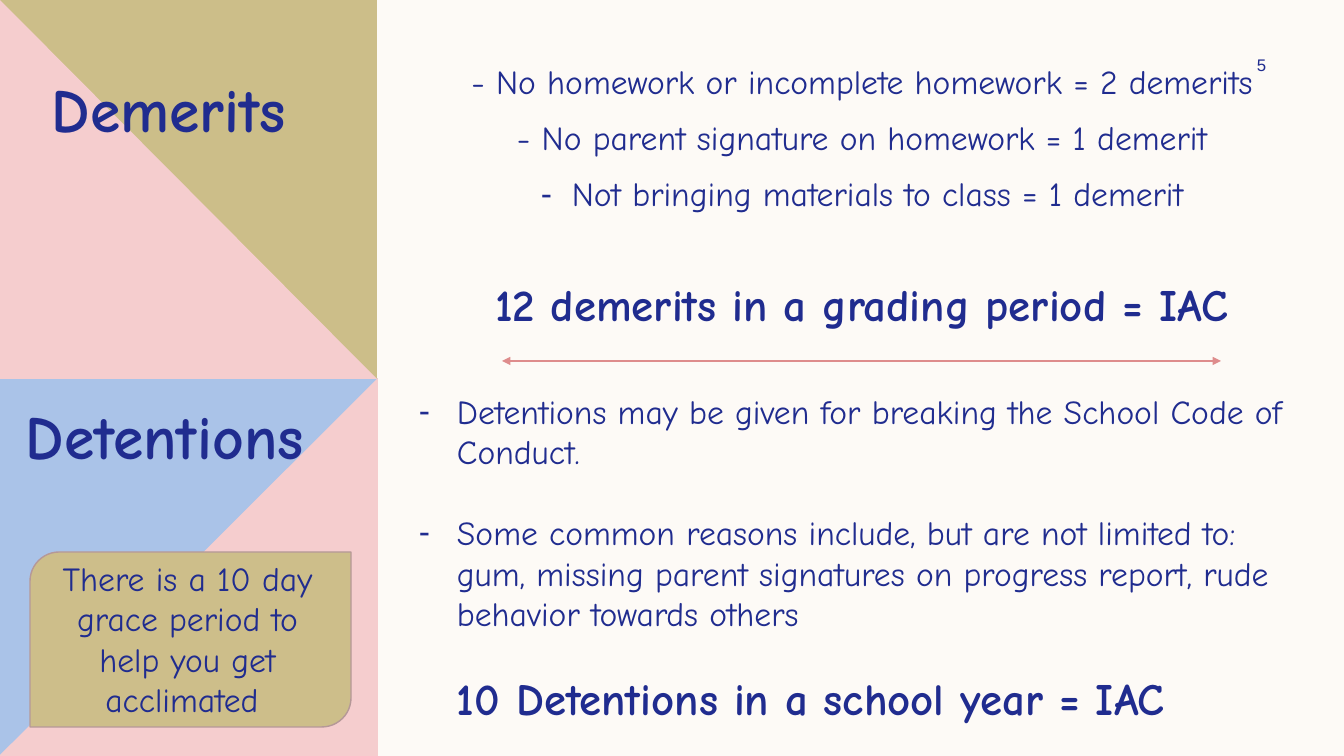
from lxml.etree import SubElement
from pptx import Presentation
from pptx.dml.color import RGBColor
from pptx.enum.shapes import MSO_CONNECTOR as Connector, MSO_SHAPE as Preset
from pptx.enum.text import MSO_ANCHOR as Anchor, PP_ALIGN as Align
from pptx.oxml.ns import qn
from pptx.util import Emu, Pt

# Content: paragraphs as (text, format)
DEMERITS = [
    ("- No homework or incomplete homework = 2 demerits", {}),
    ("- No parent signature on homework = 1 demerit", {}),
    ("Not bringing materials to class = 1 demerit", {"hang": 31}),
    ("12 demerits in a grading period = IAC", {"size": "total", "bold": True, "before": 32}),
]
DETENTIONS = [
    ("Detentions may be given for breaking the School Code of Conduct.", {"hang": 38}),
    ("Some common reasons include, but are not limited to: gum, missing parent "
     "signatures on progress report, rude behavior towards others",
     {"hang": 38, "before": 29}),
]
DETENTION_TOTAL = [("10 Detentions in a school year = IAC", {})]
GRACE = [("There is a 10 day grace period to help you get acclimated ", {})]

THEME = {
    "font": "Comic Neue", "plain_font": "Arial",
    "paper": "FDFAF6", "ink": "202C8F", "blue": "AAC3E8", "pink": "F5CDCE",
    "olive": "CCBE89", "card": "CDBE8A", "card_line": "B59898", "arrow": "DE8C8C",
    "heading": 44, "total": 32, "body": 24, "number": 12,
}

# Geometry in px
WIDTH, HEIGHT = 1344, 756
EMU_PER_PX = 12192000 / WIDTH
SIDE = 378
PANELS = [
    ("blue", [(0, SIDE), (SIDE, SIDE), (SIDE, HEIGHT), (0, HEIGHT)]),
    ("pink", [(SIDE, SIDE), (SIDE, HEIGHT), (0, HEIGHT), (0, HEIGHT - 1)]),
    ("olive", [(0, 0), (377, 0), (377, 379), (0, 379)]),
    ("pink", [(0, 0), (377, 379), (0, 379)]),
]


def px(value):
    return Emu(round(value * EMU_PER_PX))


def color(name):
    return RGBColor.from_string(THEME[name])


def paint(shape, fill, line=None):
    shape.shadow.inherit = False
    shape.fill.solid()
    shape.fill.fore_color.rgb = color(fill)
    if line:
        shape.line.color.rgb = color(line)
        shape.line.width = Pt(1)
    else:
        shape.line.fill.background()


def add_bullet(paragraph, hang):
    properties = paragraph._p.get_or_add_pPr()
    properties.set("marL", str(px(hang)))
    properties.set("indent", str(-px(hang)))
    SubElement(properties, qn("a:buFont"), typeface=THEME["plain_font"])
    SubElement(properties, qn("a:buChar"), char="-")


def add_text(slide, paragraphs, box, size="body", bold=False, align=Align.LEFT,
             font="font", anchor=Anchor.TOP, spacing=None, after=0):
    frame = slide.shapes.add_textbox(*map(px, box)).text_frame
    frame.word_wrap = True
    frame.vertical_anchor = anchor
    for index, (text, style) in enumerate(paragraphs):
        paragraph = frame.add_paragraph() if index else frame.paragraphs[0]
        paragraph.alignment = align
        paragraph.line_spacing = spacing
        paragraph.space_before = Pt(style.get("before", 0))
        paragraph.space_after = Pt(after)
        if "hang" in style:
            add_bullet(paragraph, style["hang"])
        run = paragraph.add_run()
        run.text = text
        run.font.name = THEME[font]
        run.font.size = Pt(THEME[style.get("size", size)])
        run.font.bold = style.get("bold", bold)
        run.font.color.rgb = color("ink")


def add_panel(slide, fill, points):
    start, *rest = points
    builder = slide.shapes.build_freeform(*start, scale=EMU_PER_PX)
    builder.add_line_segments(rest, close=True)
    paint(builder.convert_to_shape(), fill)


def add_double_arrow(slide, left, right, y):
    arrow = slide.shapes.add_connector(Connector.STRAIGHT, px(left), px(y), px(right), px(y))
    arrow.line.color.rgb = color("arrow")
    arrow.line.width = Pt(1.5)
    line = arrow.line._get_or_add_ln()
    for end in ("a:headEnd", "a:tailEnd"):
        SubElement(line, qn(end), type="triangle")
    SubElement(arrow._element.spPr, qn("a:effectLst"))


def main():
    presentation = Presentation()
    presentation.slide_width, presentation.slide_height = px(WIDTH), px(HEIGHT)
    slide = presentation.slides.add_slide(presentation.slide_layouts[6])
    slide.background.fill.solid()
    slide.background.fill.fore_color.rgb = color("paper")

    # Side panels and grace period card
    for fill, points in PANELS:
        add_panel(slide, fill, points)
    card = slide.shapes.add_shape(Preset.ROUND_2_DIAG_RECTANGLE,
                                  *map(px, (30, 552, 321, 175)))
    paint(card, "card", "card_line")
    add_text(slide, GRACE, (34, 553, 307, 173), align=Align.CENTER)

    # Headings
    add_text(slide, [("Demerits", {})], (42, 66, 326, 85), size="heading", bold=True)
    add_text(slide, [("Detentions", {})], (16, 393, 678, 85), size="heading", bold=True)

    # Demerit rules and slide number
    add_text(slide, DEMERITS, (375, 48, 974, 219), align=Align.CENTER,
             spacing=1.19, after=6)
    add_text(slide, [("5", {})], (1207, 50, 109, 30), size="number",
             font="plain_font", align=Align.CENTER, anchor=Anchor.MIDDLE)
    add_double_arrow(slide, 502, 1221, 361)

    # Detention rules
    add_text(slide, DETENTIONS, (409, 386, 905, 295))
    add_text(slide, DETENTION_TOTAL, (447, 666, 867, 65), size="total", bold=True)

    presentation.save("out.pptx")


if __name__ == "__main__":
    main()
